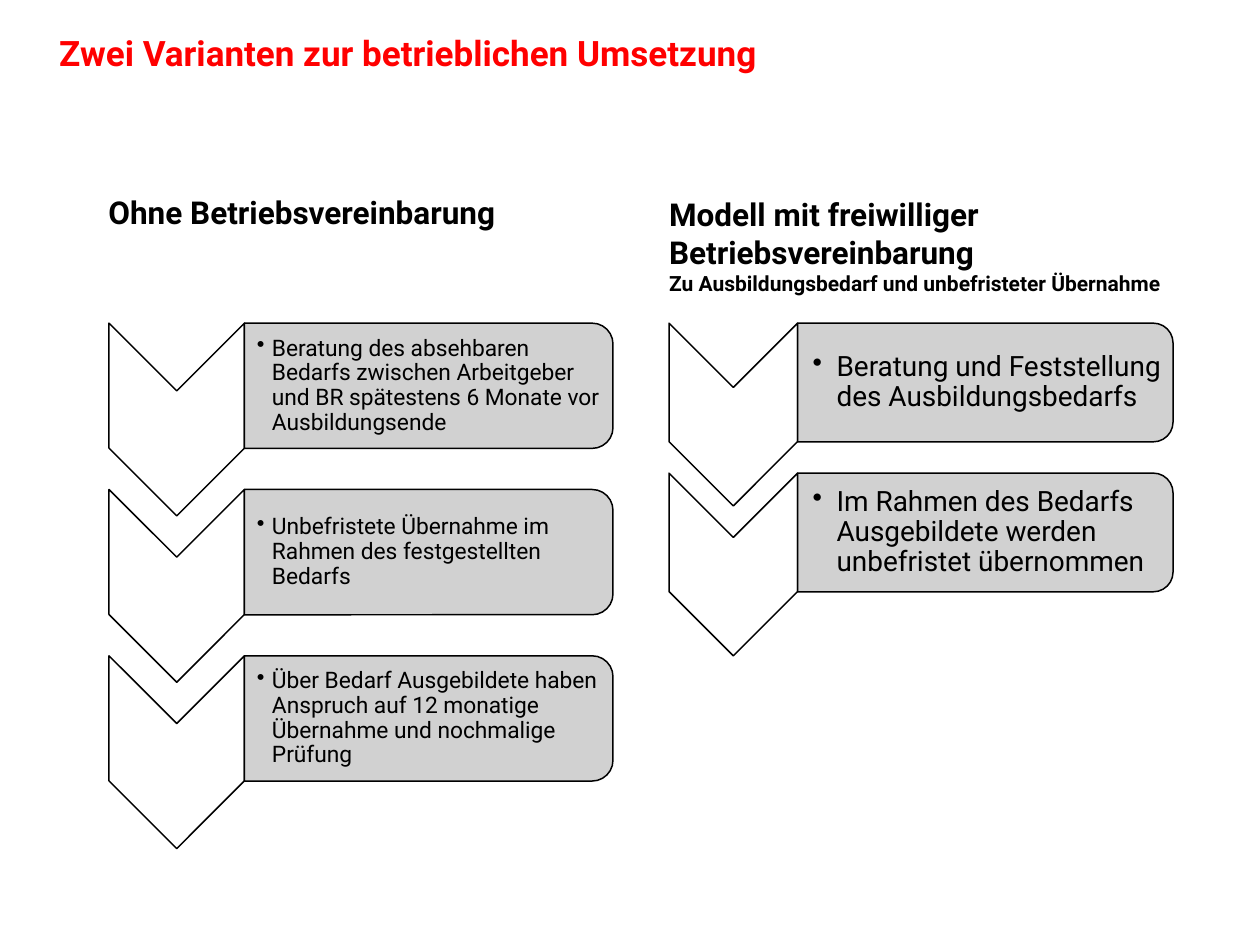
from collections import namedtuple
from lxml.etree import SubElement
from pptx import Presentation
from pptx.dml.color import RGBColor
from pptx.enum.shapes import MSO_SHAPE
from pptx.enum.text import MSO_ANCHOR, MSO_AUTO_SIZE, PP_ALIGN
from pptx.oxml.ns import qn
from pptx.util import Inches, Pt

COLUMNS, ROWS = 100, 75
FONT = "Roboto"
Box = namedtuple("Box", "left top width height")

presentation = Presentation()
presentation.slide_width = Inches(10)
presentation.slide_height = Inches(7.5)


def columns(count):
    return round(presentation.slide_width * count / COLUMNS)


def rows(count):
    return round(presentation.slide_height * count / ROWS)


def place(shape, box):
    shape.left, shape.top = columns(box.left), rows(box.top)
    shape.width, shape.height = columns(box.width), rows(box.height)


def color(hex_string):
    return RGBColor.from_string(hex_string)


def set_font(paragraph, size, hex_string, bold=False):
    paragraph.font.name = FONT
    paragraph.font.size = Pt(size)
    paragraph.font.bold = bold
    paragraph.font.color.rgb = color(hex_string)


def set_frame(frame, anchor, left, top, right, bottom):
    frame.word_wrap = True
    frame.auto_size = MSO_AUTO_SIZE.NONE
    frame.vertical_anchor = anchor
    frame.margin_left, frame.margin_right = columns(left), columns(right)
    frame.margin_top, frame.margin_bottom = rows(top), rows(bottom)


def fill_placeholder(placeholder, box, lines, hex_string, anchor, insets):
    place(placeholder, box)
    frame = placeholder.text_frame
    set_frame(frame, anchor, *insets)
    frame.text = "\n".join(text for text, size in lines)
    for paragraph, (text, size) in zip(frame.paragraphs, lines):
        paragraph.alignment = PP_ALIGN.LEFT
        paragraph.space_before = Pt(0)
        set_font(paragraph, size, hex_string, bold=True)


def add_turned_shape(slide, kind, box, hex_string):
    shift = (box.width - box.height) / 2
    shape = slide.shapes.add_shape(kind, 0, 0, 0, 0)
    place(shape, Box(box.left + shift, box.top - shift, box.height, box.width))
    shape.rotation = 90
    shape.shadow.inherit = False
    shape.fill.solid()
    shape.fill.fore_color.rgb = color(hex_string)
    shape.line.color.rgb = color("000000")
    shape.line.width = Pt(0.85)
    return shape


def add_card(slide, box, text, size, inset, indent):
    card = add_turned_shape(slide, MSO_SHAPE.ROUND_2_SAME_RECTANGLE, box, "CCCCCC")
    fill_color = card.fill._xPr.find(qn("a:solidFill")).find(qn("a:srgbClr"))
    SubElement(fill_color, qn("a:alpha"), val="90000")

    label = slide.shapes.add_textbox(0, 0, 0, 0)
    place(label, Box(box.left, box.top + 0.5, box.width - 0.5, box.height - 1))
    set_frame(label.text_frame, MSO_ANCHOR.MIDDLE, inset, 0.1, 0.1, 0.1)
    paragraph = label.text_frame.paragraphs[0]
    paragraph.text = text
    paragraph.line_spacing = 0.9
    properties = paragraph._p.get_or_add_pPr()
    properties.set("marL", str(columns(indent)))
    properties.set("indent", str(-columns(indent)))
    SubElement(properties, qn("a:buChar"), char="•")
    set_font(paragraph, size, "000000")


def add_chevron_list(slide, box, chevron_width, step, texts, size, inset, indent):
    chevron_height = box.height - step * (len(texts) - 1)
    card_height = chevron_height * 0.65
    for index, text in enumerate(texts):
        top = box.top + index * step
        chevron = Box(box.left, top, chevron_width, chevron_height)
        add_turned_shape(slide, MSO_SHAPE.CHEVRON, chevron, "FFFFFF")
        card = Box(box.left + chevron_width, top, box.width - chevron_width, card_height)
        add_card(slide, card, text, size, inset, indent)


def build_slide():
    slide = presentation.slides.add_slide(presentation.slide_layouts[4])
    title, left_heading, left_body, right_heading, right_body = slide.placeholders
    for unused in (left_body, right_body):
        unused.element.getparent().remove(unused.element)

    fill_placeholder(title, Box(4.7, 1.3, 73.2, 5.1),
                     [("Zwei Varianten zur betrieblichen Umsetzung", 20)],
                     "FF0000", MSO_ANCHOR.MIDDLE, (0, 1, 1, 0))
    title.text_frame.paragraphs[0].line_spacing = 0.9

    heading_insets = (0, 0, 1, 0.5)
    fill_placeholder(left_heading, Box(8.6, 15.3, 34.3, 5.1),
                     [("Ohne Betriebsvereinbarung", 18)],
                     "000000", MSO_ANCHOR.TOP, heading_insets)
    fill_placeholder(right_heading, Box(53.1, 15.5, 45.3, 8.9),
                     [("Modell mit freiwilliger Betriebsvereinbarung", 18),
                      ("Zu Ausbildungsbedarf und unbefristeter Übernahme", 12)],
                     "000000", MSO_ANCHOR.TOP, heading_insets)

    add_chevron_list(slide, Box(8.65, 25.65, 40, 41.7), 10.75, 13.2, [
        "Beratung des absehbaren Bedarfs zwischen Arbeitgeber und BR "
        "spätestens 6 Monate vor Ausbildungsende",
        "Unbefristete Übernahme im Rahmen des festgestellten Bedarfs",
        "Über Bedarf Ausgebildete haben Anspruch auf 12 monatige "
        "Übernahme und nochmalige Prüfung",
    ], size=13, inset=1, indent=1.2)
    add_chevron_list(slide, Box(53.1, 25.65, 40, 26.4), 10.2, 11.9, [
        "Beratung und Feststellung des Ausbildungsbedarfs",
        "Im Rahmen des Bedarfs Ausgebildete werden unbefristet übernommen",
    ], size=16, inset=1.2, indent=1.9)


if __name__ == "__main__":
    build_slide()
    presentation.save("out.pptx")
